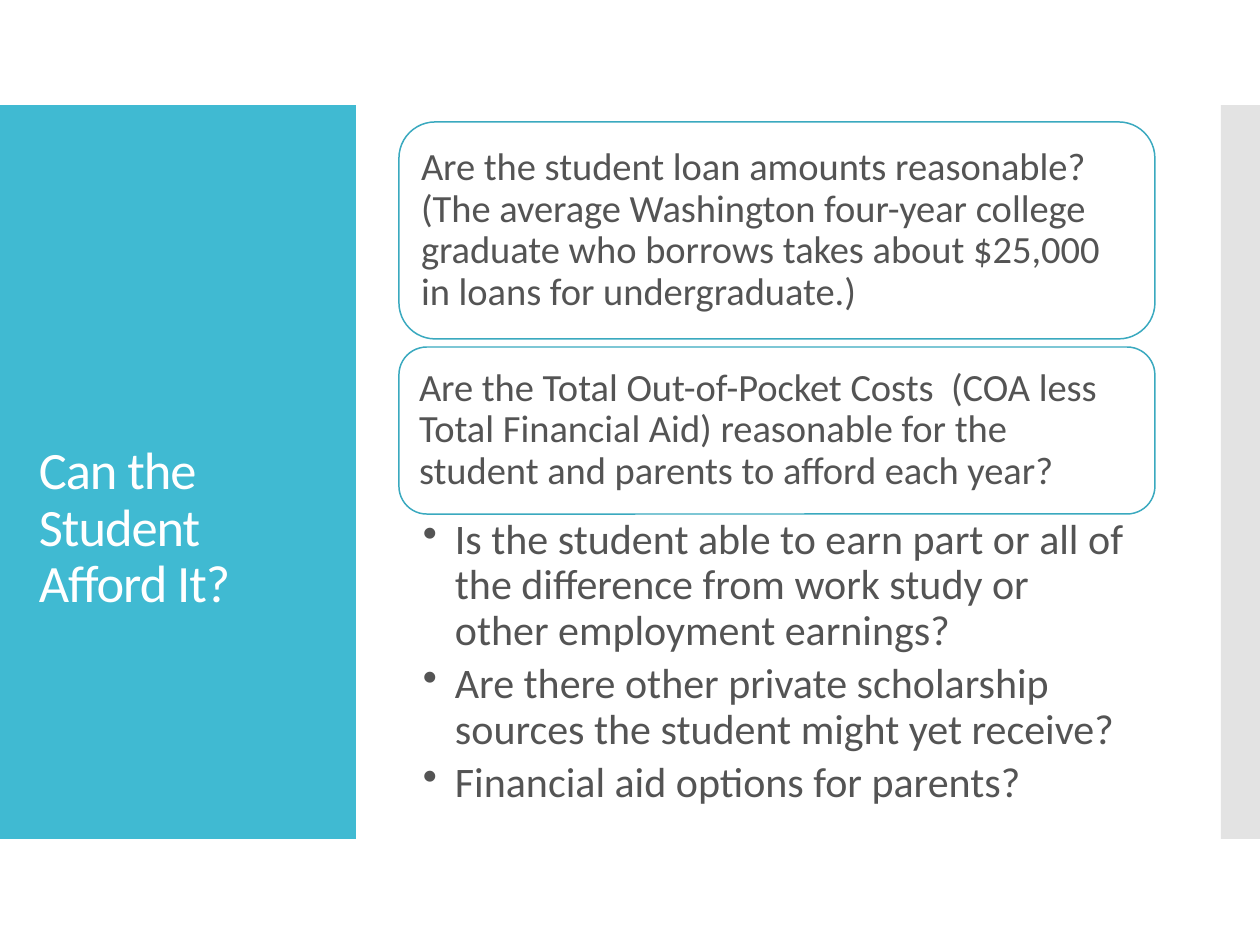
from lxml import etree
from pptx import Presentation
from pptx import util as u
from pptx.dml.color import RGBColor
from pptx.enum import shapes, text
from pptx.oxml.ns import qn

PX = 914400 / 126
TEAL = RGBColor(0x40, 0xBA, 0xD2)
EDGE = RGBColor(0x3A, 0xA9, 0xBF)
SILVER = RGBColor(0xC8, 0xC8, 0xC8)
WHITE = RGBColor(0xFF, 0xFF, 0xFF)
INK = RGBColor(0x54, 0x54, 0x54)

TITLE = "Can the Student Afford It?"
QUESTIONS = [
    ("Are the student loan amounts reasonable?  (The average Washington "
     "four-year college graduate who borrows takes about $25,000 in loans "
     "for undergraduate.)", (399, 122, 756, 217), 11),
    ("Are the Total Out-of-Pocket Costs  (COA less Total Financial Aid) "
     "reasonable for the student and parents to afford each year?",
     (399, 347, 756, 167), 9),
]
FOLLOW_UPS = [
    "Is the student able to earn part or all of the difference from work "
    "study or other employment earnings?",
    "Are there other private scholarship sources the student might yet receive?",
    "Financial aid options for parents?",
]
PANEL = (0, 105, 356, 734)
STRIP = (1221, 105, 39, 734)
TITLE_BOX = (26, 155, 305, 634)
FOLLOW_UP_BOX = (399, 514, 756, 307)
BULLET_INDENT = 32


def px(n):
    return u.Emu(round(n * PX))


def add_block(kind, box, fill, edge=None):
    block = slide.shapes.add_shape(kind, *map(px, box))
    block.shadow.inherit = False
    block.fill.solid()
    block.fill.fore_color.rgb = fill
    if edge is None:
        block.line.fill.background()
    else:
        block.line.color.rgb = edge
        block.line.width = u.Pt(0.85)
    return block


def add_text(lines, box, insets, size, color, anchor, after=0):
    frame = slide.shapes.add_textbox(*map(px, box)).text_frame
    left, top, right, bottom = map(px, insets)
    frame_format = {
        "word_wrap": True, "auto_size": text.MSO_AUTO_SIZE.NONE,
        "vertical_anchor": anchor, "margin_left": left, "margin_top": top,
        "margin_right": right, "margin_bottom": bottom,
    }
    for key, value in frame_format.items():
        setattr(frame, key, value)
    for i, line in enumerate(lines):
        paragraph = frame.add_paragraph() if i else frame.paragraphs[0]
        paragraph.line_spacing = 0.9
        paragraph.space_after = u.Pt(size * after)
        run = paragraph.add_run()
        run.text = line
        run.font.color.rgb = color
        for key, value in {"name": "Calibri", "size": u.Pt(size)}.items():
            setattr(run.font, key, value)
    return frame


deck = Presentation()
deck.slide_width, deck.slide_height = px(1260), px(945)
slide = deck.slides.add_slide(deck.slide_layouts[6])

add_block(shapes.MSO_SHAPE.RECTANGLE, PANEL, TEAL)
strip = add_block(shapes.MSO_SHAPE.RECTANGLE, STRIP, SILVER)
strip_color = strip.fill._xPr.find(qn("a:solidFill"))[0]
etree.SubElement(strip_color, qn("a:alpha")).set("val", "50000")

heading = add_text([TITLE], TITLE_BOX, (13, 120, 13, 6), 30, WHITE,
                   text.MSO_ANCHOR.MIDDLE)
heading.paragraphs[0].runs[0].font._element.set("spc", "-60")

for question, box, inset in QUESTIONS:
    add_block(shapes.MSO_SHAPE.ROUNDED_RECTANGLE, box, WHITE, EDGE)
    left, top, width, height = box
    inner = (left + inset, top + inset, width - 2 * inset, height - 2 * inset)
    add_text([question], inner, (11,) * 4, 22, INK, text.MSO_ANCHOR.MIDDLE, 0.35)

follow_ups = add_text(FOLLOW_UPS, FOLLOW_UP_BOX, (24, 4, 24, 4), 24, INK,
                      text.MSO_ANCHOR.TOP, 0.2)
for paragraph in follow_ups.paragraphs:
    paragraph.level = 1
    properties = paragraph._p.get_or_add_pPr()
    properties.set("marL", str(px(BULLET_INDENT)))
    properties.set("indent", str(-px(BULLET_INDENT)))
    etree.SubElement(properties, qn("a:buChar")).set("char", "•")

deck.save("out.pptx")
